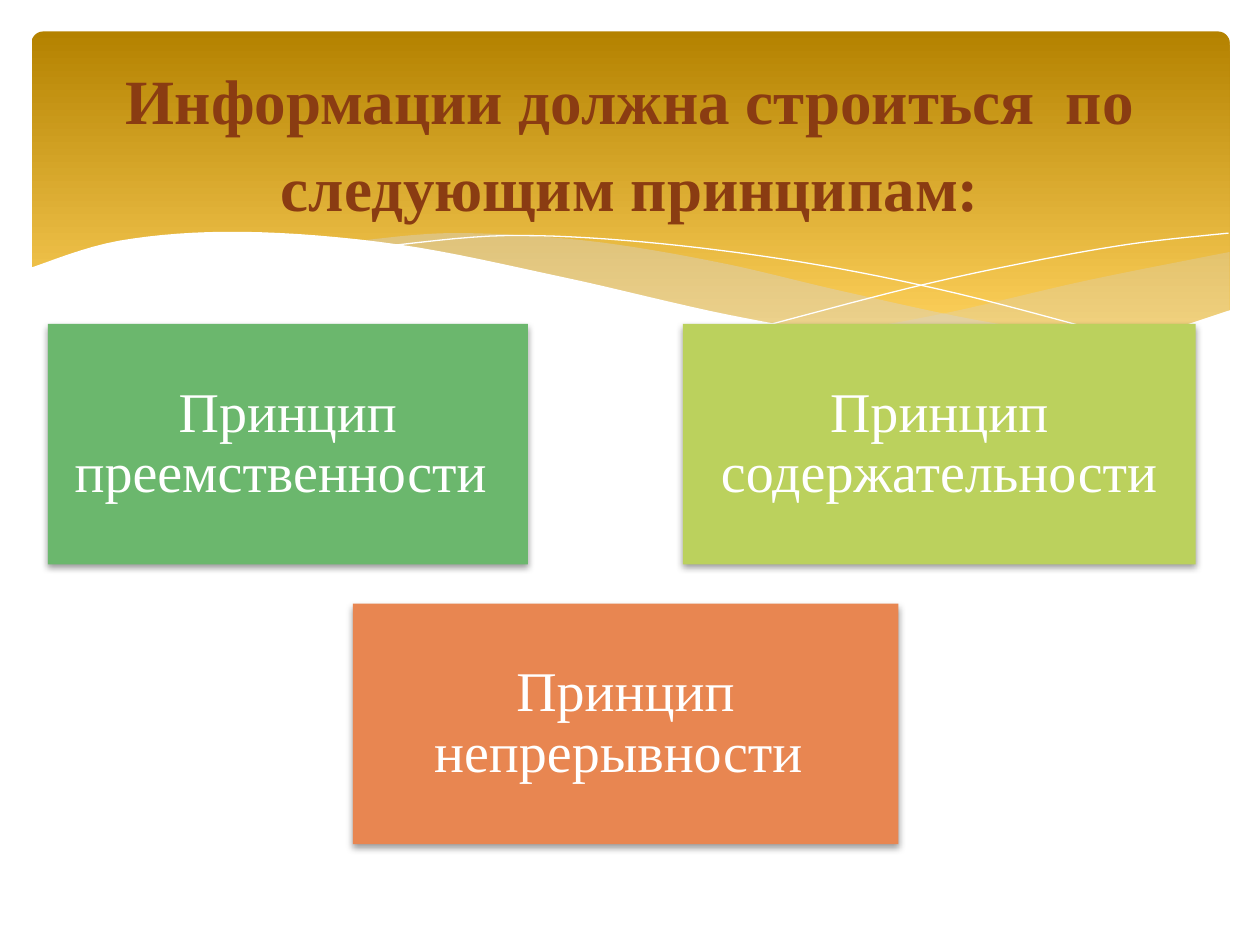
from dataclasses import dataclass
from typing import Optional

from lxml.etree import SubElement
from pptx import Presentation
from pptx.dml.color import RGBColor
from pptx.enum.shapes import MSO_SHAPE
from pptx.enum.text import MSO_ANCHOR, MSO_AUTO_SIZE, PP_ALIGN
from pptx.oxml.ns import qn
from pptx.util import Inches, Pt


@dataclass(frozen=True)
class Theme:
    font: str = "Times New Roman"
    title_size: int = 36
    card_size: int = 32
    title: str = "8A3C12"
    white: str = "FFFFFF"
    band_top: str = "B48200"
    band_bottom: str = "FFD25D"
    haze: str = "D4D4D6"
    green: str = "6BB76D"
    lime: str = "BBD15D"
    orange: str = "E88651"
    shadow: str = "000000"


@dataclass(frozen=True)
class Wave:
    crest: tuple  # knots of the smooth upper edge
    base: tuple = ()  # knots of the smooth lower edge, back to the start
    floor: Optional[float] = None  # straight bottom in place of a lower edge
    fill: Optional[str] = None  # no fill means an open hairline
    opacity: int = 100


@dataclass(frozen=True)
class Card:
    text: str
    left: float
    top: float
    width: float
    color: str


THEME = Theme()
CURVE_STEPS = 8
CARD_HEIGHT = 1.91
CARD_INSET = 0.13
ROW_TOP = 2.57
ROW_STEP = 2.22

CARDS = (
    Card("Принцип преемственности ", 0.38, ROW_TOP, 3.81, THEME.green),
    Card("Принцип содержательности", 5.42, ROW_TOP, 4.07, THEME.lime),
    Card("Принцип непрерывности ", 2.8, ROW_TOP + ROW_STEP, 4.33, THEME.orange),
)

RIGHT_HAZE = Wave(
    crest=((6.61, 2.65), (7.53, 2.48), (8.61, 2.23), (9.76, 2)),
    base=((9.76, 2.47), (8.97, 2.7), (8.14, 2.78), (6.61, 2.65)),
    fill=THEME.haze, opacity=29)
MIDDLE_HAZE = Wave(
    crest=((2.86, 1.91), (3.61, 1.85), (4.65, 1.91), (5.69, 2.08),
           (6.68, 2.31), (7.75, 2.54), (8.93, 2.73)),
    base=((8.93, 2.73), (8.18, 2.78), (7.09, 2.72), (5.66, 2.48),
          (4.49, 2.22), (2.86, 1.91)),
    fill=THEME.haze, opacity=40)
FALLING_LINE = Wave(
    crest=((3.09, 1.95), (4.01, 1.87), (5.1, 1.92), (6.36, 2.08),
           (7.6, 2.33), (9.07, 2.72)))
RISING_LINE = Wave(
    crest=((6.13, 2.57), (7.2, 2.29), (8.06, 2.1), (8.95, 1.94), (9.75, 1.85)))
FOREGROUND = Wave(
    crest=((0.23, 2.13), (0.95, 1.91), (1.93, 1.84), (3.16, 1.94), (4.47, 2.2),
           (5.79, 2.5), (6.88, 2.68), (8.09, 2.77), (8.99, 2.69), (9.77, 2.46)),
    floor=3.29, fill=THEME.white)
WAVES = (RIGHT_HAZE, MIDDLE_HAZE, FALLING_LINE, RISING_LINE, FOREGROUND)


def rgb(value: str) -> RGBColor:
    return RGBColor.from_string(value)


def smooth(knots: tuple) -> list:
    """Catmull-Rom curve through the knots."""
    if not knots:
        return []
    padded = (knots[0], *knots, knots[-1])
    curve = [knots[0]]
    for a, b, c, d in zip(padded, padded[1:], padded[2:], padded[3:]):
        for step in range(1, CURVE_STEPS + 1):
            t = step / CURVE_STEPS
            curve.append(tuple(
                q + t / 2 * (r - p + t * (2 * p - 5 * q + 4 * r - s
                                          + t * (3 * (q - r) + s - p)))
                for p, q, r, s in zip(a, b, c, d)))
    return curve


def add_span(para, text: str, size: int, color: str, bold: bool = False) -> None:
    span = para.add_run()
    span.text = text
    span.font.name = THEME.font
    span.font.size = Pt(size)
    span.font.bold = bold
    span.font.color.rgb = rgb(color)


def add_band(page) -> None:
    band = page.shapes.add_shape(MSO_SHAPE.ROUNDED_RECTANGLE, Inches(0.25),
                                 Inches(0.25), Inches(9.51), Inches(2.7))
    band.adjustments[0] = 0.034
    band.shadow.inherit = False
    band.line.fill.background()
    band.fill.gradient()
    band.fill.gradient_angle = 270
    colors = (THEME.band_top, THEME.band_bottom)
    for stop, position, color in zip(band.fill.gradient_stops, (0, 0.9), colors):
        stop.position = position
        stop.color.rgb = rgb(color)


def add_wave(page, wave: Wave) -> None:
    outline = smooth(wave.crest) + smooth(wave.base)
    if wave.floor is not None:
        outline += [(wave.crest[-1][0], wave.floor), (wave.crest[0][0], wave.floor)]
    points = [(Inches(x), Inches(y)) for x, y in outline]
    builder = page.shapes.build_freeform(*points[0])
    builder.add_line_segments(points[1:], close=wave.fill is not None)
    shape = builder.convert_to_shape()
    shape.shadow.inherit = False
    if wave.fill is None:
        shape.fill.background()
        shape.line.color.rgb = rgb(THEME.white)
        shape.line.width = Pt(0)
        return
    shape.line.fill.background()
    shape.fill.solid()
    shape.fill.fore_color.rgb = rgb(wave.fill)
    if wave.opacity < 100:
        color = shape.element.spPr.find(qn("a:solidFill")).find(qn("a:srgbClr"))
        SubElement(color, qn("a:alpha"), val=str(wave.opacity * 1000))


def add_shadow(shape) -> None:
    shape.shadow.inherit = False
    effects = shape.element.spPr.find(qn("a:effectLst"))
    outer = SubElement(effects, qn("a:outerShdw"), blurRad=str(int(Pt(4))),
                       dist=str(int(Pt(2))), dir="5400000", rotWithShape="0")
    color = SubElement(outer, qn("a:srgbClr"), val=THEME.shadow)
    SubElement(color, qn("a:alpha"), val="38000")


def add_card(page, card: Card) -> None:
    box = page.shapes.add_shape(MSO_SHAPE.RECTANGLE, Inches(card.left), Inches(card.top),
                                Inches(card.width), Inches(CARD_HEIGHT))
    box.fill.solid()
    box.fill.fore_color.rgb = rgb(card.color)
    box.line.fill.background()
    add_shadow(box)
    frame = box.text_frame
    frame.word_wrap = True
    frame.vertical_anchor = MSO_ANCHOR.MIDDLE
    frame.margin_left = frame.margin_right = Inches(CARD_INSET)
    frame.margin_top = frame.margin_bottom = Inches(CARD_INSET)
    para = frame.paragraphs[0]
    para.alignment = PP_ALIGN.CENTER
    para.line_spacing = 0.9
    add_span(para, card.text, THEME.card_size, THEME.white)


def place_title(page) -> None:
    title = page.shapes.title
    title.left, title.top = Inches(0.5), Inches(0.76)
    title.width, title.height = Inches(9), Inches(0.98)
    frame = title.text_frame
    frame.word_wrap = True
    frame.auto_size = MSO_AUTO_SIZE.NONE
    frame.vertical_anchor = MSO_ANCHOR.MIDDLE
    frame.margin_bottom = Inches(0.37)  # lifts the two lines within the band
    para = frame.paragraphs[0]
    para.alignment = PP_ALIGN.CENTER
    para.line_spacing = 1.15
    para.space_after = Pt(10)
    add_span(para, "Информации должна строиться  по следующим принципам:",
             THEME.title_size, THEME.title, bold=True)
    # Bring the title in front of the band
    title.element.getparent().append(title.element)


def main() -> None:
    deck = Presentation()
    deck.slide_width, deck.slide_height = Inches(10), Inches(7.5)
    page = deck.slides.add_slide(deck.slide_layouts[5])
    # Header band with waves
    add_band(page)
    for wave in WAVES:
        add_wave(page, wave)
    # Principles
    for card in CARDS:
        add_card(page, card)
    place_title(page)
    deck.save("out.pptx")


if __name__ == "__main__":
    main()
